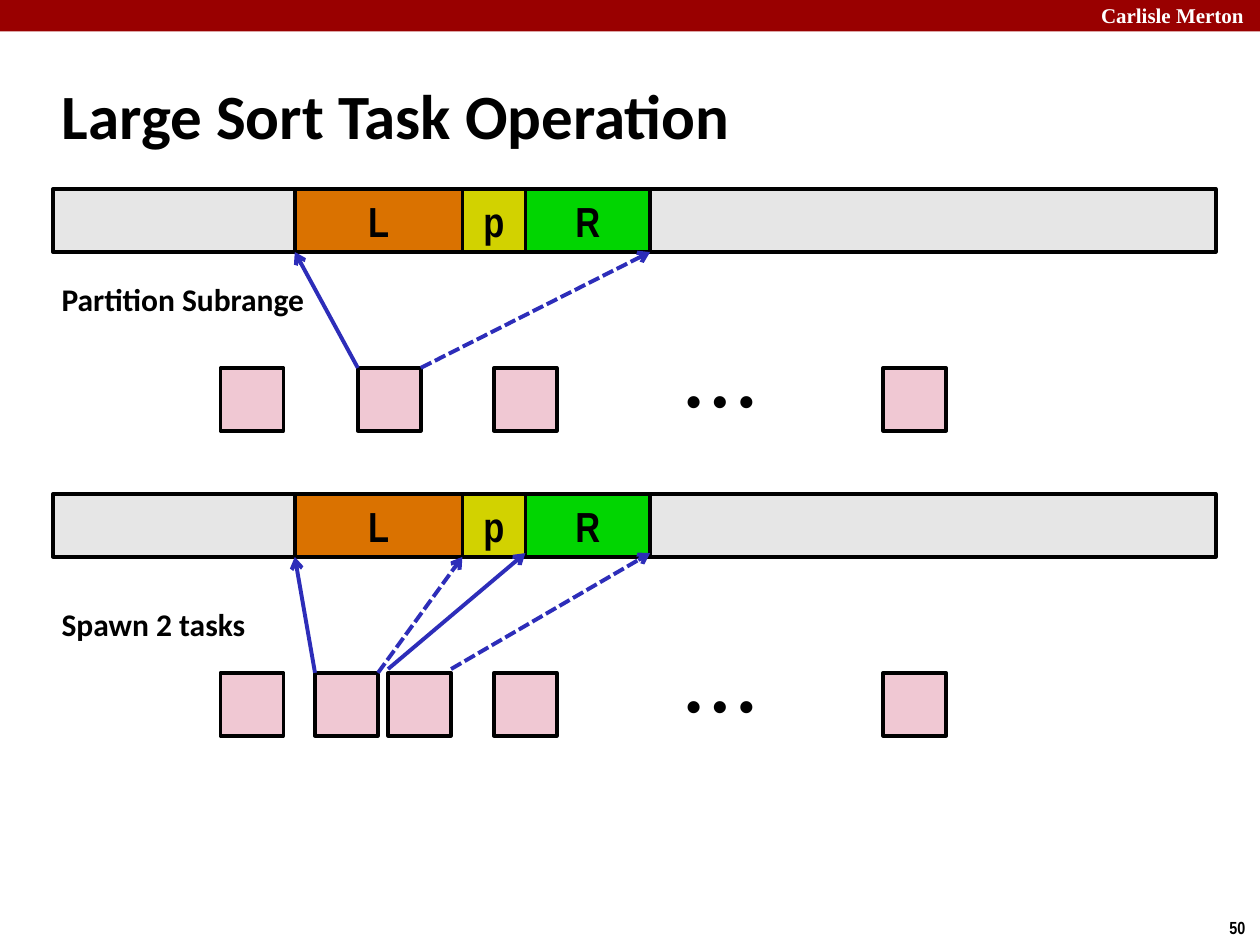
"""Build the slide on how a large sort task splits into two tasks."""
from lxml import etree
from pptx import Presentation
from pptx.dml.color import RGBColor
from pptx.enum.dml import MSO_LINE
from pptx.enum.shapes import MSO_CONNECTOR, MSO_SHAPE
from pptx.enum.text import MSO_ANCHOR, MSO_AUTO_SIZE, PP_ALIGN
from pptx.oxml.ns import qn
from pptx.util import Inches, Pt

RECT = MSO_SHAPE.RECTANGLE
STRAIGHT = MSO_CONNECTOR.STRAIGHT
DASH = MSO_LINE.SQUARE_DOT
LEFT, CENTER = PP_ALIGN.LEFT, PP_ALIGN.CENTER
TOP, MIDDLE = MSO_ANCHOR.TOP, MSO_ANCHOR.MIDDLE
FIXED = MSO_AUTO_SIZE.NONE

BLACK = RGBColor(0x00, 0x00, 0x00)
WHITE = RGBColor(0xFF, 0xFF, 0xFF)
RED = RGBColor(0x99, 0x00, 0x00)
GRAY = RGBColor(0xE6, 0xE6, 0xE6)
PINK = RGBColor(0xF0, 0xC8, 0xD3)
ORANGE = RGBColor(0xDA, 0x72, 0x00)
YELLOW = RGBColor(0xD2, 0xD2, 0x00)
GREEN = RGBColor(0x01, 0xD5, 0x01)
BLUE = RGBColor(0x2D, 0x2D, 0xB9)

SIDE = 0.5
BAR_LEFT, BAR_WIDTH = 0.42, 9.23
L_EDGE, P_EDGE, R_EDGE, END = 2.34, 3.67, 4.17, 5.16
PARTS = [("L", L_EDGE, P_EDGE, ORANGE), ("p", P_EDGE, R_EDGE, YELLOW),
         ("R", R_EDGE, END, GREEN)]
IDLE = [1.75, 3.92, 7.01]


class Deck:
    """Hold the slide and the style of its elements."""

    def __init__(self, slide):
        """Keep the shapes of the slide to draw on."""
        self.shapes = slide.shapes

    def letter(self, shape, text, size, font, color=BLACK, align=LEFT, anchor=TOP, wrap=False):
        """Put one bold line of text in a shape."""
        frame = shape.text_frame
        frame.text = text
        frame.auto_size = FIXED
        frame.word_wrap = wrap
        frame.vertical_anchor = anchor
        line = frame.paragraphs[0]
        line.alignment = align
        style = line.runs[0].font
        style.size, style.name, style.bold = Pt(size), font, True
        style.color.rgb = color

    def title(self, text, x, y, w, h):
        """Place and fill the title."""
        shape = self.shapes.title
        shape.left, shape.top, shape.width, shape.height = map(Inches, (x, y, w, h))
        self.letter(shape, text, 36, "Calibri", anchor=MIDDLE, wrap=True)

    def label(self, text, x, y, w, h, size, font="Calibri", **style):
        """Add a text box."""
        box = self.shapes.add_textbox(*map(Inches, (x, y, w, h)))
        self.letter(box, text, size, font, **style)

    def block(self, x, y, w, h, color, text="", edge=True):
        """Add a filled rectangle."""
        box = self.shapes.add_shape(RECT, *map(Inches, (x, y, w, h)))
        box.shadow.inherit = False
        box.fill.solid()
        box.fill.fore_color.rgb = color
        if edge:
            box.line.color.rgb = BLACK
            box.line.width = Pt(2)
        else:
            box.line.fill.background()
        if text:
            self.letter(box, text, 24, "Arial Narrow", align=CENTER, anchor=MIDDLE)

    def arrow(self, x, y, to_x, to_y, dash=False):
        """Add a line with an open arrowhead at its end."""
        link = self.shapes.add_connector(STRAIGHT, *map(Inches, (x, y, to_x, to_y)))
        link.line.color.rgb = BLUE
        link.line.width = Pt(2.25)
        if dash:
            link.line.dash_style = DASH
        etree.SubElement(link.get_or_add_ln(), qn("a:tailEnd"), type="arrow")
        etree.SubElement(link.element.spPr, qn("a:effectLst"))

    def stage(self, top, note, note_top, note_width, tasks):
        """Draw the array, the row of tasks and the ranges they point to."""
        base, row = top + SIDE, top + 1.42
        self.block(BAR_LEFT, top, BAR_WIDTH, SIDE, GRAY)
        for name, start, stop, color in PARTS:
            self.block(start, top, stop - start, SIDE, color, name)
        for x in IDLE + [task[0] for task in tasks]:
            self.block(x, row, SIDE, SIDE, PINK)
        self.label("• • •", 4.42, row, 2.59, SIDE, 24, "Arial", align=CENTER, anchor=MIDDLE)
        for x, start, stop, lift in tasks:
            self.arrow(x + SIDE, row - lift, stop, base - lift, dash=True)
            self.arrow(x, row - lift, start, base - lift)
        self.label(note, 0.39, note_top, note_width, 0.4, 18)


def main():
    """Build and save the deck."""
    show = Presentation()
    show.slide_width, show.slide_height = Inches(10), Inches(7.5)
    deck = Deck(show.slides.add_slide(show.slide_layouts[5]))
    deck.block(0, 0, 10, 0.25, RED, edge=False)
    deck.label("Carlisle Merton", 8.64, -0.03, 1.43, 0.3, 12, "Times New Roman", color=WHITE)
    deck.label("50", 9.66, 7.23, 0.34, 0.27, 10, "Arial Narrow")
    deck.title("Large Sort Task Operation", 0.39, 0.49, 8.3, 0.83)
    deck.stage(1.5, "Partition Subrange", 2.17, 2.17, [(2.84, L_EDGE, END, 0)])
    deck.stage(3.92, "Spawn 2 tasks", 4.75, 1.68,
               [(2.5, L_EDGE, P_EDGE, 0), (3.08, R_EDGE, END, 0.03)])
    show.save("out.pptx")


if __name__ == "__main__":
    main()
